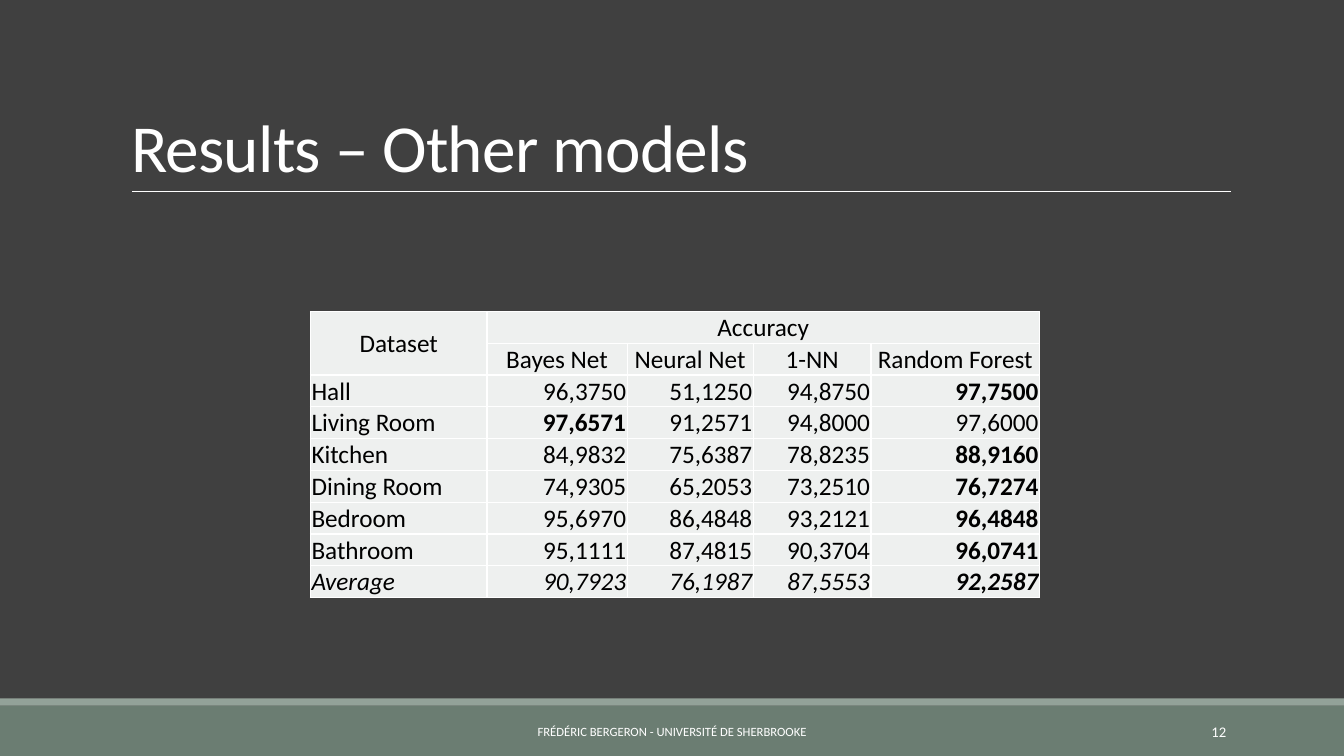
from dataclasses import dataclass

from lxml.etree import SubElement
from pptx import Presentation
from pptx.dml.color import RGBColor
from pptx.enum.shapes import MSO_CONNECTOR, MSO_SHAPE
from pptx.enum.text import MSO_ANCHOR, MSO_AUTO_SIZE, PP_ALIGN
from pptx.oxml.ns import qn
from pptx.util import Inches, Pt


@dataclass(frozen=True)
class Theme:
    font: str = "Calibri"
    background: str = "404040"
    band: str = "6B7D72"
    stripe: str = "93A299"
    light: str = "FFFFFF"
    dark: str = "000000"
    cell: str = "EEF0EF"
    title_size: float = 48
    table_size: float = 18
    footer_size: float = 9
    number_size: float = 10.5


THEME = Theme()
WIDTH, HEIGHT = 13.33, 7.5
BAND_TOP, STRIPE_HEIGHT = 7, 0.07
FOOTER_TOP, FOOTER_HEIGHT = 7.06, 0.4
TABLE_LEFT, TABLE_TOP, ROW_HEIGHT = 3.08, 3.09, 0.31
COLUMN_WIDTHS = (1.75, 1.39, 1.25, 1.17, 1.67)

MODELS = ("Bayes Net", "Neural Net", "1-NN", "Random Forest")
ACCURACY = {
    "Hall": ("96,3750", "51,1250", "94,8750", "97,7500"),
    "Living Room": ("97,6571", "91,2571", "94,8000", "97,6000"),
    "Kitchen": ("84,9832", "75,6387", "78,8235", "88,9160"),
    "Dining Room": ("74,9305", "65,2053", "73,2510", "76,7274"),
    "Bedroom": ("95,6970", "86,4848", "93,2121", "96,4848"),
    "Bathroom": ("95,1111", "87,4815", "90,3704", "96,0741"),
    "Average": ("90,7923", "76,1987", "87,5553", "92,2587"),
}


def rgb(color):
    return RGBColor.from_string(color)


def write(tf, text, size, color, align, bold=False, italic=False):
    tf.text = text
    p = tf.paragraphs[0]
    p.alignment = align
    font = p.font
    font.name, font.size, font.color.rgb = THEME.font, Pt(size), rgb(color)
    font.bold, font.italic = bold, italic
    return p


def add_bar(s, top, height, color):
    sp = s.shapes.add_shape(MSO_SHAPE.RECTANGLE, 0, Inches(top),
                            Inches(WIDTH), Inches(height))
    sp.shadow.inherit = False
    sp.fill.solid()
    sp.fill.fore_color.rgb = rgb(color)
    sp.line.fill.background()


def add_rule(s, left, right, y):
    line = s.shapes.add_connector(MSO_CONNECTOR.STRAIGHT, Inches(left),
                                  Inches(y), Inches(right), Inches(y))
    line.line.color.rgb = rgb(THEME.light)
    line.line.width = Pt(0.5)
    SubElement(line._element.spPr, qn("a:effectLst"))


def set_title(s, text):
    sp = s.shapes.title
    sp.left, sp.top = Inches(1.2), Inches(0.31)
    sp.width, sp.height = Inches(11), Inches(1.59)
    tf = sp.text_frame
    tf.auto_size = MSO_AUTO_SIZE.NONE
    tf.vertical_anchor = MSO_ANCHOR.BOTTOM
    p = write(tf, text, THEME.title_size, THEME.light, PP_ALIGN.LEFT)
    p.line_spacing = 0.85
    p.runs[0].font._element.set("spc", "-50")


def add_footer_text(s, left, width, text, size, align):
    sp = s.shapes.add_textbox(Inches(left), Inches(FOOTER_TOP),
                              Inches(width), Inches(FOOTER_HEIGHT))
    tf = sp.text_frame
    tf.word_wrap = True
    tf.vertical_anchor = MSO_ANCHOR.MIDDLE
    write(tf, text, size, THEME.light, align)


def format_cell(cell):
    """Give the cell thin margins, white borders and the table fill."""
    cell.margin_left = cell.margin_right = cell.margin_top = Inches(0.01)
    cell.margin_bottom = 0
    cell.vertical_anchor = MSO_ANCHOR.BOTTOM
    tc_pr = cell._tc.get_or_add_tcPr()
    for side in ("lnL", "lnR", "lnT", "lnB"):
        border = SubElement(tc_pr, qn(f"a:{side}"), w=str(Pt(1)))
        fill = SubElement(border, qn("a:solidFill"))
        SubElement(fill, qn("a:srgbClr"), val=THEME.light)
    cell.fill.solid()
    cell.fill.fore_color.rgb = rgb(THEME.cell)


def add_accuracy_table(s):
    """Draw the results, with the best model of each row in bold."""
    rows, cols = len(ACCURACY) + 2, len(COLUMN_WIDTHS)
    table = s.shapes.add_table(rows, cols, Inches(TABLE_LEFT), Inches(TABLE_TOP),
                               Inches(sum(COLUMN_WIDTHS)),
                               Inches(rows * ROW_HEIGHT)).table
    table.first_row = table.horz_banding = False
    for column, width in zip(table.columns, COLUMN_WIDTHS):
        column.width = Inches(width)
    for row in table.rows:
        row.height = Inches(ROW_HEIGHT)
    for cell in table.iter_cells():
        format_cell(cell)

    def put(row, col, text, align=PP_ALIGN.CENTER, **style):
        write(table.cell(row, col).text_frame, text, THEME.table_size,
              THEME.dark, align, **style)

    table.cell(0, 0).merge(table.cell(1, 0))
    table.cell(0, 1).merge(table.cell(0, cols - 1))
    table.cell(0, 0).vertical_anchor = MSO_ANCHOR.MIDDLE
    put(0, 0, "Dataset")
    put(0, 1, "Accuracy")
    for col, model in enumerate(MODELS, 1):
        put(1, col, model)
    for row, (dataset, values) in enumerate(ACCURACY.items(), 2):
        italic = dataset == "Average"
        put(row, 0, dataset, PP_ALIGN.LEFT, italic=italic)
        for col, value in enumerate(values, 1):
            put(row, col, value, PP_ALIGN.RIGHT,
                bold=value == max(values), italic=italic)


def main():
    prs = Presentation()
    prs.slide_width, prs.slide_height = Inches(WIDTH), Inches(HEIGHT)
    s = prs.slides.add_slide(prs.slide_layouts.get_by_name("Title Only"))
    s.background.fill.solid()
    s.background.fill.fore_color.rgb = rgb(THEME.background)

    add_bar(s, BAND_TOP, HEIGHT - BAND_TOP, THEME.band)
    add_bar(s, BAND_TOP - STRIPE_HEIGHT, STRIPE_HEIGHT, THEME.stripe)
    add_rule(s, 1.31, 12.21, 1.9)
    set_title(s, "Results – Other models")
    add_accuracy_table(s)
    add_footer_text(s, 4.03, 5.27, "FRÉDÉRIC BERGERON - UNIVERSITÉ DE SHERBROOKE",
                    THEME.footer_size, PP_ALIGN.CENTER)
    add_footer_text(s, 10.83, 1.43, "12", THEME.number_size, PP_ALIGN.RIGHT)
    prs.save("out.pptx")


if __name__ == "__main__":
    main()
